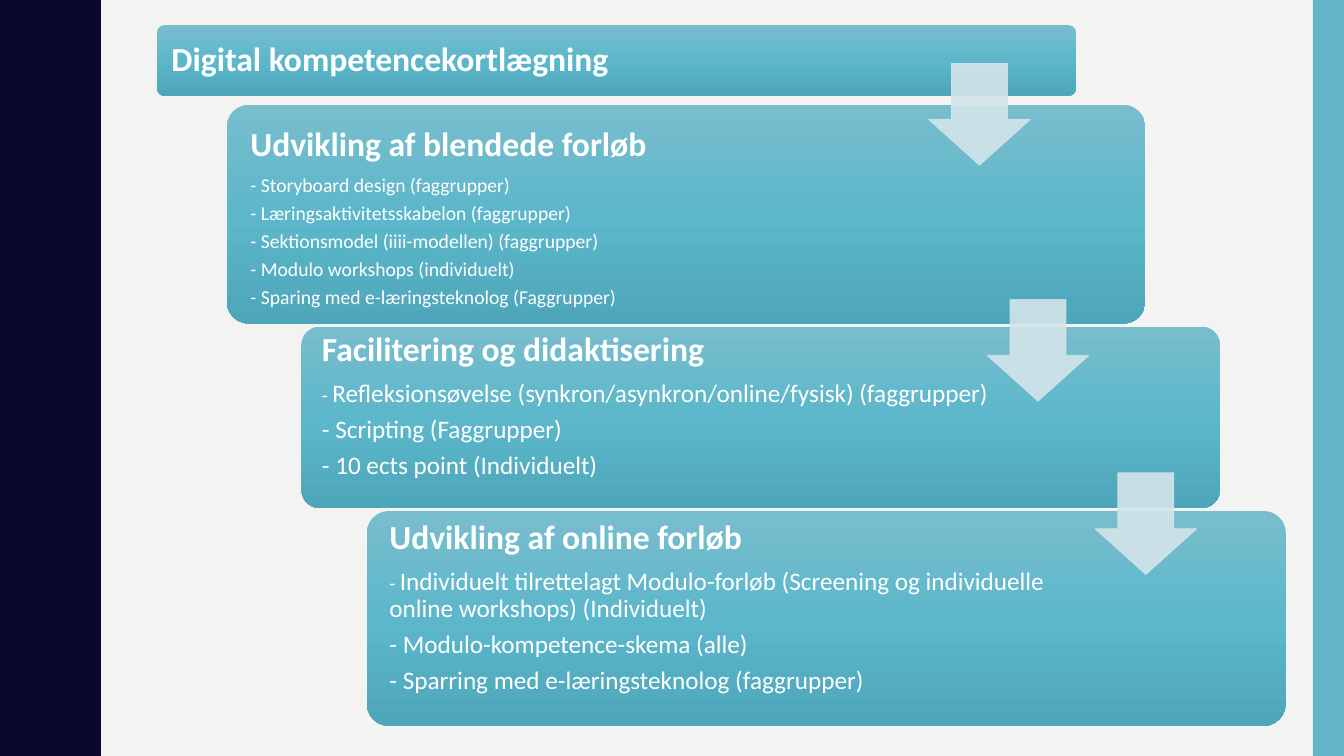
from copy import deepcopy
from math import cos, pi

from pptx import Presentation
from pptx.dml.color import RGBColor
from pptx.enum.shapes import MSO_SHAPE
from pptx.enum.text import MSO_ANCHOR
from pptx.oxml.ns import qn
from pptx.util import Inches, Pt

RECT, ROUND = MSO_SHAPE.RECTANGLE, MSO_SHAPE.ROUNDED_RECTANGLE
ARROW = MSO_SHAPE.DOWN_ARROW
TOP, MIDDLE = MSO_ANCHOR.TOP, MSO_ANCHOR.MIDDLE

WIDE, HIGH = 13.33, 7.5
STEP_W, TEXT_W = 9.11, 7.01
ARROW_W = 1.01
HEAD, BODY, SMALL = 24, 18, 14
FONT = "Calibri"
COLORS = {
    "back": "F3F3F2",
    "wave": "0B082E",
    "bar": "62B4C6",
    "light": "78BDCD",
    "mid": "5DB7CB",
    "dark": "4DA6BA",
    "arrow": "D3E5EA",
    "text": "FFFFFF",
}

# Each step: left, top, height, left inset, top inset, anchor, lines.
# Each line is a list of (text, size) runs.
STEPS = [
    (1.56, 0.25, 0.7, 0.12, 0, MIDDLE,
     [[("Digital kompetencekortlægning", HEAD)]]),
    (2.25, 1.04, 2.17, 0.17, 0.16, TOP,
     [[("Udvikling af blendede forløb", HEAD)],
      [("- Storyboard design (faggrupper)", SMALL)],
      [("- Læringsaktivitetsskabelon (faggrupper)", SMALL)],
      [("- Sektionsmodel (iiii-modellen) (faggrupper)", SMALL)],
      [("- Modulo workshops (individuelt)", SMALL)],
      [("- Sparing med e-læringsteknolog (Faggrupper)", SMALL)]]),
    (2.99, 3.24, 1.8, 0.15, 0.01, TOP,
     [[("Facilitering og didaktisering", HEAD)],
      [("- ", SMALL),
       ("Refleksionsøvelse (synkron/asynkron/online/fysisk) (faggrupper)",
        BODY)],
      [("- Scripting (Faggrupper)", BODY)],
      [("- 10 ects point (Individuelt)", BODY)]]),
    (3.64, 5.07, 2.13, 0.16, 0.03, TOP,
     [[("Udvikling af online forløb", HEAD)],
      [("- ", SMALL),
       ("Individuelt tilrettelagt Modulo-forløb (Screening og individuelle "
        "online workshops) (Individuelt)", BODY)],
      [("- Modulo-kompetence-skema (alle)", BODY)],
      [("- Sparring med e-læringsteknolog (faggrupper)", BODY)]]),
]
ARROWS = [(9.21, 0.63), (9.79, 2.97), (10.86, 4.69)]


def color(name):
    return RGBColor.from_string(COLORS[name])


def paint(shape, name):
    shape.shadow.inherit = False
    shape.fill.solid()
    shape.fill.fore_color.rgb = color(name)
    shape.line.fill.background()


def add_shape(slide, kind, left, top, width, height):
    return slide.shapes.add_shape(
        kind, Inches(left), Inches(top), Inches(width), Inches(height))


def add_wave(slide):
    """Draw the left band, whose right edge is a cosine of five periods."""
    period, count = HIGH / 5, 100
    edge = []
    for i in range(count + 1):
        y = HIGH * i / count
        edge.append((0.875 - 0.095 * cos(2 * pi * y / period), y))
    build = slide.shapes.build_freeform(0, 0, scale=Inches(1))
    build.add_line_segments(edge + [(0, HIGH)], close=True)
    paint(build.convert_to_shape(), "wave")


def shade(shape):
    """Fill from light at the top to dark at the bottom in three stops."""
    fill = shape.fill
    fill.gradient()
    fill.gradient_angle = 270
    stops = shape._element.xpath(".//a:gsLst")[0]
    stops.insert(1, deepcopy(stops[0]))
    for i, name in enumerate(("light", "mid", "dark")):
        stop = fill.gradient_stops[i]
        stop.position = i / 2
        stop.color.rgb = color(name)


def add_line(par, runs):
    size = runs[-1][1]
    par.line_spacing = 0.9
    par.space_after = Pt(round(0.35 * size, 1))
    par.font.name = FONT
    par.font.size = Pt(size)
    par.font.bold = size == HEAD
    par.font.color.rgb = color("text")
    for text, run_size in runs:
        run = par.add_run()
        run.text = text
        if run_size != size:
            run.font.size = Pt(run_size)


def add_step(slide, left, top, height, inset, drop, anchor, lines):
    box = add_shape(slide, ROUND, left, top, STEP_W, height)
    box.adjustments[0] = 0.1
    box.shadow.inherit = False
    box.line.fill.background()
    shade(box)
    frame = box.text_frame
    frame.word_wrap = True
    frame.vertical_anchor = anchor
    frame.margin_left = Inches(inset)
    frame.margin_right = Inches(STEP_W - TEXT_W - inset)
    frame.margin_top = Inches(drop)
    frame.margin_bottom = 0
    for i, runs in enumerate(lines):
        par = frame.add_paragraph() if i else frame.paragraphs[0]
        par.alignment = 1
        add_line(par, runs)


def add_arrow(slide, left, top):
    arrow = add_shape(slide, ARROW, left, top, ARROW_W, ARROW_W)
    arrow.adjustments[0] = 0.55
    arrow.adjustments[1] = 0.45
    paint(arrow, "arrow")
    arrow.line.color.rgb = color("arrow")
    arrow.line.width = Pt(0.5)
    for tint in arrow._element.spPr.iter(qn("a:srgbClr")):
        alpha = tint.makeelement(qn("a:alpha"), {"val": "90000"})
        tint.append(alpha)


def main():
    deck = Presentation()
    deck.slide_width, deck.slide_height = Inches(WIDE), Inches(HIGH)
    slide = deck.slides.add_slide(deck.slide_layouts[6])
    back = slide.background.fill
    back.solid()
    back.fore_color.rgb = color("back")
    add_wave(slide)
    paint(add_shape(slide, RECT, 13.02, 0, WIDE - 13.02, HIGH), "bar")
    for step in STEPS:
        add_step(slide, *step)
    for spot in ARROWS:
        add_arrow(slide, *spot)
    deck.save("out.pptx")


if __name__ == "__main__":
    main()
